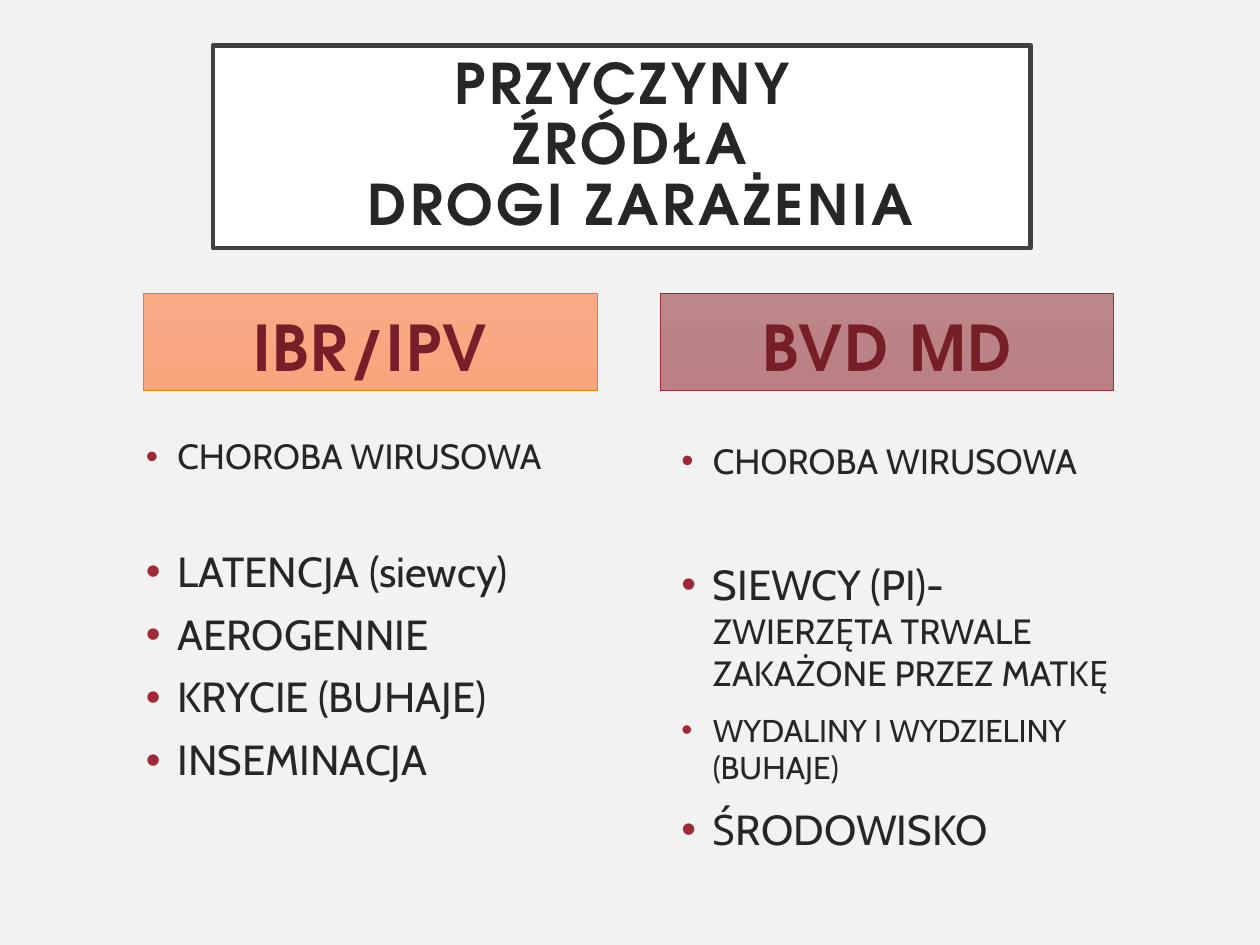
from lxml import etree
from pptx import Presentation
from pptx.dml.color import RGBColor
from pptx.enum.shapes import MSO_SHAPE
from pptx.enum.text import MSO_ANCHOR, PP_ALIGN
from pptx.oxml import parse_xml
from pptx.oxml.ns import nsdecls, qn
from pptx.util import Inches, Pt

RECTANGLE = MSO_SHAPE.RECTANGLE
CENTER, LEFT = PP_ALIGN.CENTER, PP_ALIGN.LEFT
TOP, MIDDLE, BOTTOM = MSO_ANCHOR.TOP, MSO_ANCHOR.MIDDLE, MSO_ANCHOR.BOTTOM

WIDTH, HEIGHT = 10, 7.5
HEADING_FONT, BODY_FONT = "TeX Gyre Adventor", "Cabin"
INK, MAROON, RED = "262626", "771F28", "9F2936"
COLUMN_WIDTH = 3.6
HEADING_TOP, HEADING_HEIGHT = 2.33, 0.77
LIST_TOP, LIST_HEIGHT = 3.44, 2.84
BULLET_INDENT = 0.25

TITLE_LINES = [("PRZYCZYNY", 0), ("ŹRÓDŁA", 0.13), ("DROGI ZARAŻENIA", 0.3)]

COLUMNS = [
    {
        "heading": "IBR/IPV", "heading_left": 1.14, "list_left": 1.06,
        "gradient": ("F8AA85", "F9A67E"), "border": "F07F09",
        "line_spacing": 0.9, "group_gap": 42,
        "items": [
            [("CHOROBA WIRUSOWA", 20)],
            [("LATENCJA (siewcy)", 24)],
            [("AEROGENNIE", 24)],
            [("KRYCIE (BUHAJE)", 24)],
            [("INSEMINACJA", 24)],
        ],
    },
    {
        "heading": "BVD MD", "heading_left": 5.24, "list_left": 5.31,
        "gradient": ("BD8689", "BB8083"), "border": RED,
        "line_spacing": 1.0, "group_gap": 44,
        "items": [
            [("CHOROBA WIRUSOWA", 20)],
            [("SIEWCY (PI)-", 24), ("ZWIERZĘTA TRWALE ZAKAŻONE PRZEZ MATKĘ", 20)],
            [("WYDALINY I WYDZIELINY (BUHAJE)", 18)],
            [("ŚRODOWISKO", 24)],
        ],
    },
]


def paint(color_format, value):
    """Set a colour format to a hex value."""
    color_format.rgb = RGBColor.from_string(value)


def add_text(paragraph, text, *, size, font, color, bold=False, spacing=0, shadow=False):
    """Append a formatted run to a paragraph."""
    run = paragraph.add_run()
    run.text = text
    run.font.size, run.font.name, run.font.bold = Pt(size), font, bold
    run.font.fill.solid()
    paint(run.font.fill.fore_color, color)
    properties = run.font.fill._xPr
    if spacing:
        properties.set("spc", str(spacing * 100))
    if shadow:
        properties.find(qn("a:solidFill")).addnext(parse_xml(
            f'<a:effectLst {nsdecls("a")}><a:outerShdw blurRad="38100" dist="38100" '
            'dir="2700000" algn="tl"><a:srgbClr val="000000"><a:alpha val="43000"/>'
            '</a:srgbClr></a:outerShdw></a:effectLst>'))


def set_frame(frame, anchor, inset=None):
    """Set wrapping, anchor and optional equal insets of a text frame."""
    frame.word_wrap, frame.vertical_anchor = True, anchor
    if inset is not None:
        frame.margin_left = frame.margin_right = Inches(inset)
        frame.margin_top = frame.margin_bottom = Inches(inset)
    return frame


def next_paragraph(frame, index, align, before=0, line_spacing=1.0):
    """Return the paragraph at an index of a frame being filled in order."""
    paragraph = frame.add_paragraph() if index else frame.paragraphs[0]
    paragraph.alignment = align
    paragraph.space_before, paragraph.line_spacing = Pt(before), line_spacing
    return paragraph


def add_panel(slide, left, top, width, height, colors, border, border_width):
    """Add a bordered rectangle with a solid or vertical gradient fill."""
    panel = slide.shapes.add_shape(
        RECTANGLE, Inches(left), Inches(top), Inches(width), Inches(height))
    panel.shadow.inherit = False
    if len(colors) == 1:
        panel.fill.solid()
        paint(panel.fill.fore_color, colors[0])
    else:
        panel.fill.gradient()
        panel.fill.gradient_angle = 270
        for stop, color in zip(panel.fill.gradient_stops, colors):
            paint(stop.color, color)
    paint(panel.line.color, border)
    panel.line.width = Pt(border_width)
    return panel


def add_bullet(paragraph):
    """Give a paragraph a red bullet with a hanging indent."""
    properties = paragraph._p.get_or_add_pPr()
    indent = Inches(BULLET_INDENT)
    properties.set("marL", str(indent))
    properties.set("indent", str(-indent))
    color = etree.SubElement(properties, qn("a:buClr"))
    etree.SubElement(color, qn("a:srgbClr"), val=RED)
    etree.SubElement(properties, qn("a:buFont"), typeface="Arial")
    etree.SubElement(properties, qn("a:buChar"), char="•")


def add_title(slide):
    """Add the framed title with its stepped lines."""
    panel = add_panel(slide, 1.69, 0.36, 6.49, 1.61, ["FFFFFF"], "404040", 2.5)
    frame = set_frame(panel.text_frame, MIDDLE, 0.2)
    for index, (line, step) in enumerate(TITLE_LINES):
        paragraph = next_paragraph(frame, index, CENTER, line_spacing=0.9)
        paragraph._p.get_or_add_pPr().set("marL", str(Inches(step)))
        add_text(paragraph, line, size=32, font=HEADING_FONT, color=INK,
                 bold=True, spacing=2)


def add_heading(slide, column):
    """Add the coloured heading of a disease column."""
    panel = add_panel(slide, column["heading_left"], HEADING_TOP, COLUMN_WIDTH,
                      HEADING_HEIGHT, column["gradient"], column["border"], 0.5)
    paragraph = next_paragraph(set_frame(panel.text_frame, BOTTOM), 0, CENTER, 10)
    add_text(paragraph, column["heading"], size=36, font=HEADING_FONT,
             color=MAROON, bold=True, spacing=1)


def add_list(slide, column):
    """Add the bulleted list of a disease column."""
    box = slide.shapes.add_textbox(
        Inches(column["list_left"]), Inches(LIST_TOP),
        Inches(COLUMN_WIDTH), Inches(LIST_HEIGHT))
    frame = set_frame(box.text_frame, TOP)
    for index, item in enumerate(column["items"]):
        before = column["group_gap"] if index == 1 else 10
        paragraph = next_paragraph(frame, index, LEFT, before, column["line_spacing"])
        add_bullet(paragraph)
        for text, size in item:
            add_text(paragraph, text, size=size, font=BODY_FONT, color=INK, shadow=True)


def main():
    """Build and save the slide."""
    presentation = Presentation()
    presentation.slide_width, presentation.slide_height = Inches(WIDTH), Inches(HEIGHT)
    slide = presentation.slides.add_slide(presentation.slide_layouts[6])
    slide.background.fill.solid()
    paint(slide.background.fill.fore_color, "F2F2F2")
    add_title(slide)
    for column in COLUMNS:
        add_heading(slide, column)
        add_list(slide, column)
    presentation.save("out.pptx")


if __name__ == "__main__":
    main()
